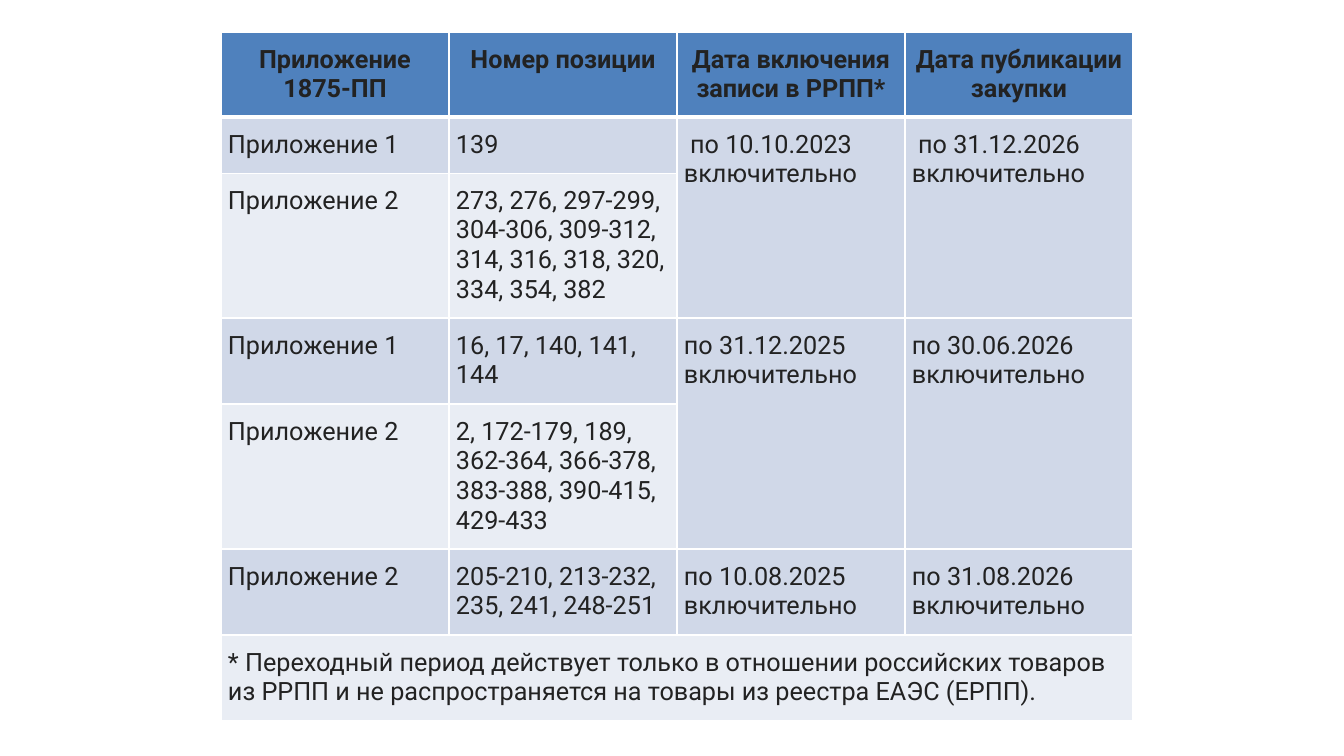
from dataclasses import dataclass

from lxml import etree
from pptx import Presentation, util as u
from pptx.dml import color
from pptx.enum import text
from pptx.oxml import ns


def px(n):
    return u.Emu(round(n * 914400 / 100.8))


@dataclass(frozen=True)
class Theme:
    font: str = "Roboto"
    size: int = 18
    ink: str = "222222"
    head: str = "4F81BD"
    bands: tuple = ("E9EDF4", "D0D8E8")
    rule: str = "FFFFFF"
    thin: int = 1
    thick: int = 3


THEME = Theme()
PAD = {"margin_left": 7, "margin_right": 7, "margin_top": 13, "margin_bottom": 13}
ROWS = [
    (85, ["Приложение\n1875-ПП", "Номер позиции",
          "Дата включения записи в РРПП*", "Дата публикации закупки"]),
    (56, ["Приложение 1", "139",
          " по 10.10.2023 включительно", " по 31.12.2026 включительно"]),
    (145, ["Приложение 2",
           "273, 276, 297-299, 304-306, 309-312, 314, 316, 318, 320, 334, 354, 382"]),
    (86, ["Приложение 1", "16, 17, 140, 141, 144",
          "по 31.12.2025 включительно", "по 30.06.2026 включительно"]),
    (145, ["Приложение 2",
           "2, 172-179, 189, 362-364, 366-378, 383-388, 390-415, 429-433"]),
    (86, ["Приложение 2", "205-210, 213-232, 235, 241, 248-251",
          "по 10.08.2025 включительно", "по 31.08.2026 включительно"]),
    (86, ["* Переходный период действует только в отношении российских товаров "
          "из РРПП и не распространяется на товары из реестра ЕАЭС (ЕРПП)."]),
]
MERGES = [((1, 2), (2, 2)), ((1, 3), (2, 3)), ((3, 2), (4, 2)),
          ((3, 3), (4, 3)), ((6, 0), (6, 3))]


def edge(cell, widths):
    props = cell._tc.get_or_add_tcPr()
    for i, (side, width) in enumerate(widths.items()):
        line = etree.Element(ns.qn(f"a:ln{side}"), w=str(u.Pt(width)))
        fill = etree.SubElement(line, ns.qn("a:solidFill"))
        etree.SubElement(fill, ns.qn("a:srgbClr"), val=THEME.rule)
        props.insert(i, line)


def paint(cell, row):
    """Fill and rule a cell according to its row."""
    shade = THEME.bands[row % 2] if row else THEME.head
    cell.fill.solid()
    cell.fill.fore_color.rgb = color.RGBColor.from_string(shade)
    edge(cell, {"L": THEME.thin, "R": THEME.thin,
                "T": THEME.thick if row == 1 else THEME.thin,
                "B": THEME.thin if row else THEME.thick})
    for name, size in PAD.items():
        setattr(cell, name, px(size))


def write(cell, words, head):
    cell.text = words
    style = {"name": THEME.font, "size": u.Pt(THEME.size), "bold": head}
    for para in cell.text_frame.paragraphs:
        para.alignment = text.PP_ALIGN.CENTER if head else text.PP_ALIGN.LEFT
        for run in para.runs:
            for name, value in style.items():
                setattr(run.font, name, value)
            run.font.color.rgb = color.RGBColor.from_string(THEME.ink)


def terms(slide, left, top, width, cols=4):
    """Place the table of transition dates."""
    high = sum(size for size, _ in ROWS)
    frame = slide.shapes.add_table(len(ROWS), cols, px(left), px(top),
                                   px(width), px(high))
    table = frame.table
    for col in table.columns:
        col.width = px(width // cols)
    for r, (size, words) in enumerate(ROWS):
        table.rows[r].height = px(size)
        for c in range(cols):
            paint(table.cell(r, c), r)
        for c, word in enumerate(words):
            write(table.cell(r, c), word, r == 0)
    for first, last in MERGES:
        table.cell(*first).merge(table.cell(*last))
    # Rows merged downwards keep the shade of their first row.


def main():
    deck = Presentation()
    deck.slide_width, deck.slide_height = px(1344), px(756)
    slide = deck.slides.add_slide(deck.slide_layouts[6])
    terms(slide, 221, 32, 912)
    deck.save("out.pptx")


if __name__ == "__main__":
    main()
